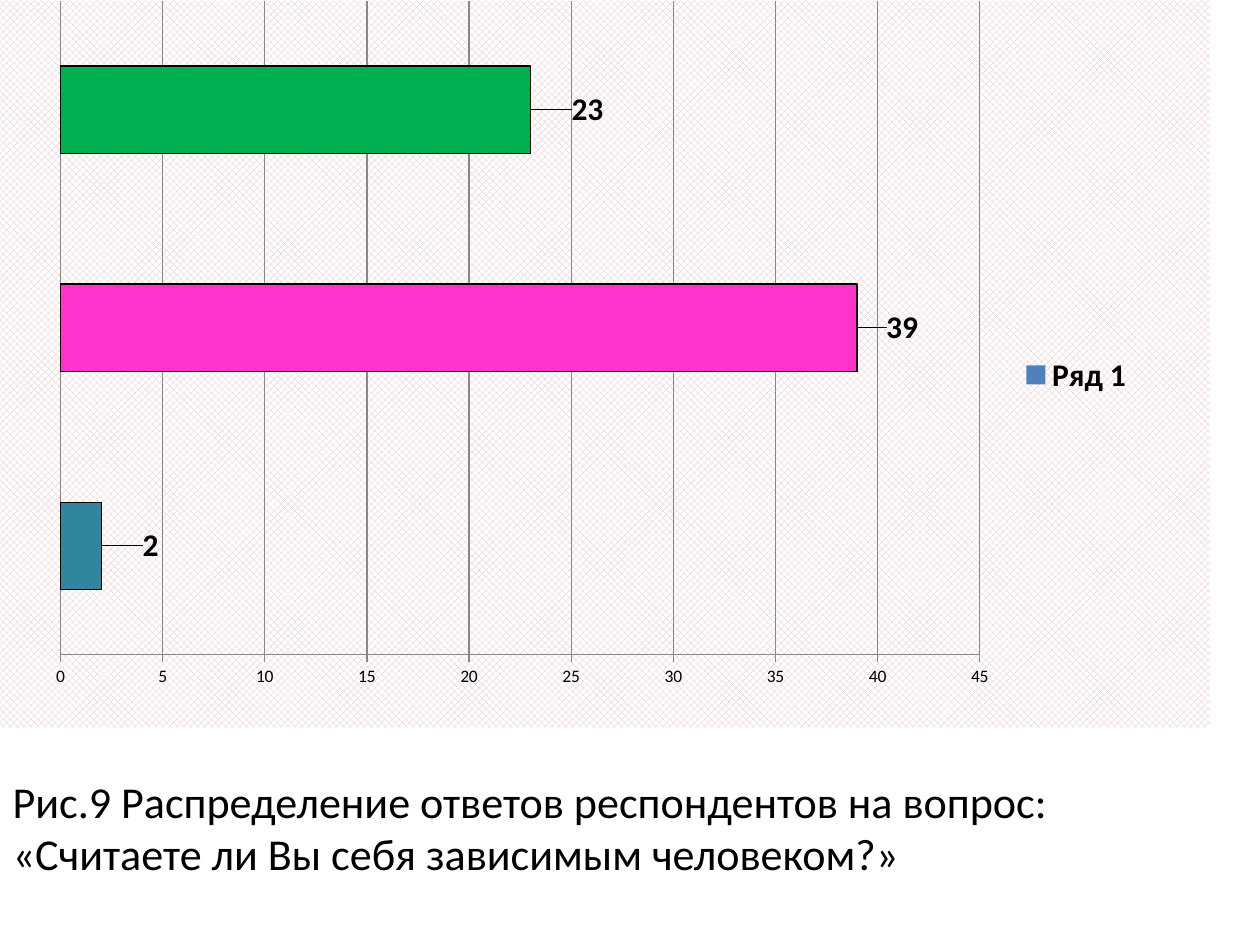
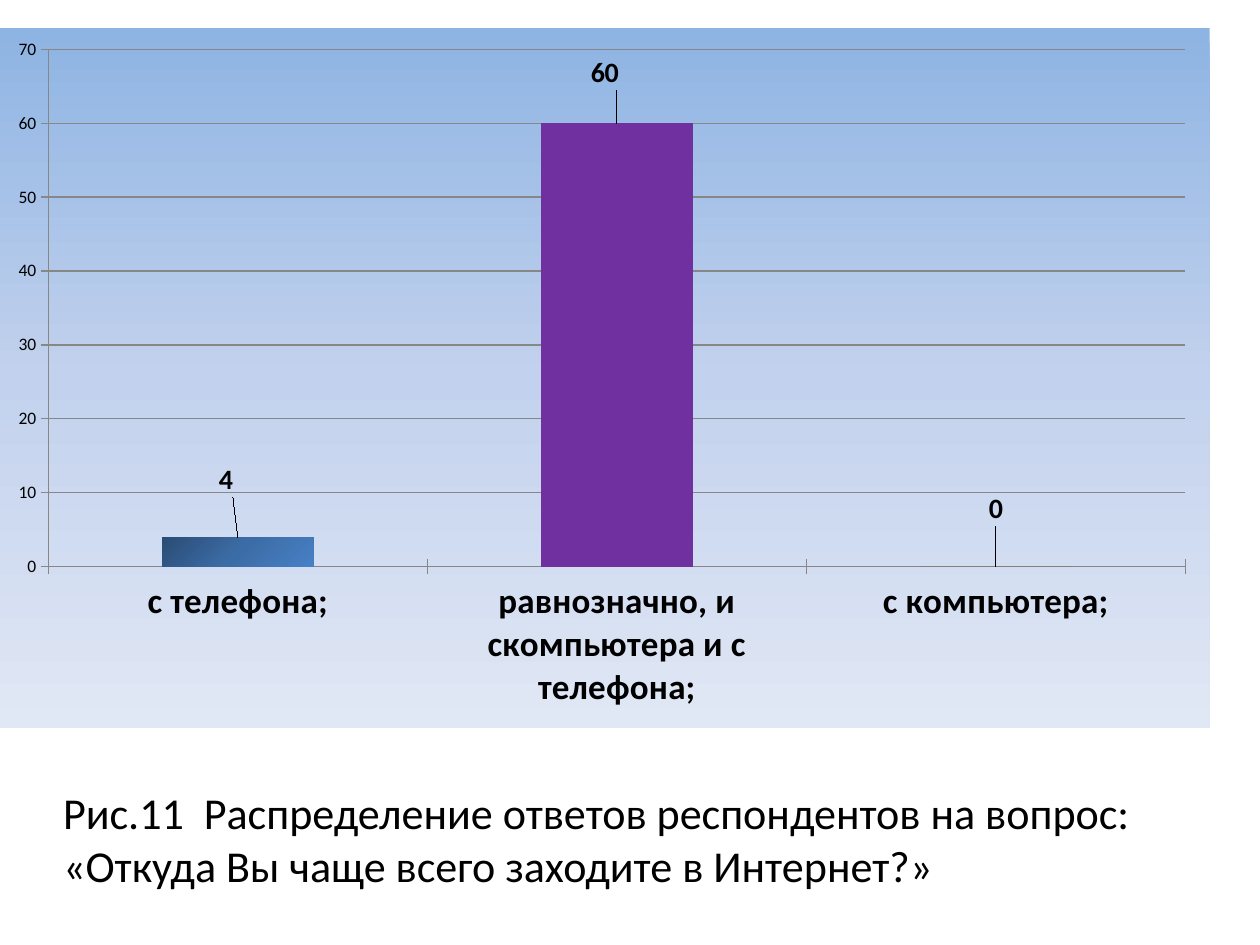
import pptx
import pptx.util
import pptx.oxml
import pptx.chart.data
import pptx.dml.color
import pptx.enum.chart
import pptx.enum.text

WIDE, HIGH = 10, 7.5
FACE, INK, GRID, BLUE = "Calibri", "000000", "878787", "4F81BD"
SPACE = ('xmlns:c="http://schemas.openxmlformats.org/drawingml/2006/chart" '
         'xmlns:a="http://schemas.openxmlformats.org/drawingml/2006/main"')
KINDS = pptx.enum.chart.XL_CHART_TYPE


def color(code):
    return pptx.dml.color.RGBColor.from_string(code)


def node(text):
    head, rest = text.split(">", 1)
    return pptx.oxml.parse_xml(f"{head} {SPACE}>{rest}")


def place(box):
    x, y, w, h = box
    return [pptx.util.Inches(n) for n in (x * WIDE, y * HIGH, w * WIDE, h * HIGH)]


def style(font, size, bold=False):
    font.name, font.size, font.bold = FACE, pptx.util.Pt(size), bold
    font.color.rgb = color(INK)


def write(frame, text, size=25.2, bold=False, foot=0.05):
    frame.word_wrap = True
    frame.auto_size = pptx.enum.text.MSO_AUTO_SIZE.NONE
    frame.vertical_anchor = pptx.enum.text.MSO_ANCHOR.MIDDLE
    frame.margin_bottom = pptx.util.Inches(foot)
    para = frame.paragraphs[0]
    para.alignment = pptx.enum.text.PP_ALIGN.LEFT
    run = para.add_run()
    run.text = text
    style(run.font, size, bold)


def shade(stops, angle):
    marks = "".join(f'<a:gs pos="{at * 1000}"><a:srgbClr val="{code}"/></a:gs>'
                    for at, code in stops)
    return (f'<a:gradFill><a:gsLst>{marks}</a:gsLst>'
            f'<a:lin ang="{angle * 60000}" scaled="0"/></a:gradFill>')


def check(fore, back):
    return (f'<a:pattFill prst="lgCheck"><a:fgClr><a:srgbClr val="{fore}"/></a:fgClr>'
            f'<a:bgClr><a:srgbClr val="{back}"/></a:bgClr></a:pattFill>')


def layout(x, y, w=None, h=None):
    parts = ""
    if w is not None:
        parts += '<c:layoutTarget val="inner"/>'
    if w is not None or h is not None:
        parts += '<c:xMode val="edge"/><c:yMode val="edge"/>'
    for name, share in zip("xywh", (x, y, w, h)):
        if share is not None:
            parts += f'<c:{name} val="{share}"/>'
    return node(f"<c:layout><c:manualLayout>{parts}</c:manualLayout></c:layout>")


def caption(slide, box, text, foot=0.05):
    title = slide.shapes.title
    title.left, title.top, title.width, title.height = place(box)
    write(title.text_frame, text, foot=foot)


def rule(line):
    line.color.rgb = color(GRID)
    line.width = pptx.util.Pt(0.75)


def axes(chart, top, step):
    value, group = chart.value_axis, chart.category_axis
    value.minimum_scale, value.maximum_scale, value.major_unit = 0, top, step
    value.has_major_gridlines = True
    rule(value.major_gridlines.format.line)
    for axis in (value, group):
        axis.major_tick_mark = pptx.enum.chart.XL_TICK_MARK.CROSS
        rule(axis.format.line)


def paint(chart, fills, size, shifts, edge):
    row = chart.plots[0].series[0]
    row.format.fill.solid()
    row.format.fill.fore_color.rgb = color(BLUE)
    row.invert_if_negative = False
    style(row.data_labels.font, size, True)
    row.data_labels.show_value = True
    for spot, (fill, shift) in enumerate(zip(fills, shifts)):
        point = row.points[spot]
        point.format.fill.solid()
        point.format.fill.fore_color.rgb = color(BLUE if "<" in fill else fill)
        if edge:
            point.format.line.color.rgb = color(INK)
            point.format.line.width = pptx.util.Pt(0.75)
        if "<" in fill:
            solid = chart.element.xpath(f".//c:dPt[{spot + 1}]/c:spPr/a:solidFill")[0]
            solid.getparent().replace(solid, node(fill))
        label = point.data_label
        style(label.font, size, True)
        label.position = pptx.enum.chart.XL_LABEL_POSITION.OUTSIDE_END
        chart.element.xpath(f".//c:dLbl[{spot + 1}]")[0].insert(1, layout(*shift))


def graph(slide, box, kind, name, names, values, back, inner):
    data = pptx.chart.data.CategoryChartData()
    data.categories = names
    data.add_series(name, values)
    chart = slide.shapes.add_chart(kind, *place(box), data).chart
    style(chart.font, 10)
    chart.has_title = chart.has_legend = False
    chart.plots[0].gap_width = 150
    chart.plots[0].vary_by_categories = False
    body = chart.element.xpath("c:chart")[0]
    body.addnext(node(f"<c:spPr>{back}<a:ln><a:noFill/></a:ln></c:spPr>"))
    area = chart.element.xpath(".//c:plotArea")[0]
    for old in area.xpath("c:layout"):
        area.remove(old)
    area.insert(0, layout(*inner))
    return chart


def legend(chart, x, y):
    chart.has_legend = True
    chart.legend.position = pptx.enum.chart.XL_LEGEND_POSITION.RIGHT
    chart.legend.include_in_layout = False
    style(chart.legend.font, 18, True)
    part = chart.element.xpath(".//c:legend")[0]
    for old in part.xpath("c:layout"):
        part.remove(old)
    part.xpath("c:legendPos")[0].addnext(node(
        '<c:layout><c:manualLayout><c:xMode val="edge"/><c:yMode val="edge"/>'
        f'<c:x val="{x}"/><c:y val="{y}"/></c:manualLayout></c:layout>'))


def habit(slide):
    caption(slide, (0, 0.79, 0.9, 0.17),
            "Рис.9 Распределение ответов респондентов на вопрос: "
            "«Считаете ли Вы себя зависимым человеком?»")
    chart = graph(slide, (0, 0, 0.96, 0.77), KINDS.BAR_CLUSTERED, "Ряд 1",
                  ("1", "2", "3"), (2, 39, 23), check("E6B9B8", "FFFFFF"),
                  (0.05, 0, 0.76, 0.9))
    axes(chart, 45, 5)
    chart.category_axis.visible = False
    paint(chart, ("31859C", "FF33CC", "00B050"), 18,
          ((0.03, 0), (0.02, 0), (0.03, 0)), True)
    legend(chart, 0.84, 0.48)


def device(slide):
    caption(slide, (0.04, 0.83, 0.9, 0.17),
            "Рис.11  Распределение ответов респондентов на вопрос: "
            "«Откуда Вы чаще всего заходите в Интернет?»", foot=0.47)
    sky = shade(((0, "8EB4E3"), (50, "C2D1ED"), (100, "E1E8F5")), 90)
    steel = shade(((0, "2A4C75"), (50, "3C6CA6"), (100, "4780C5")), 45)
    chart = graph(slide, (0, 0.03, 0.96, 0.74), KINDS.COLUMN_CLUSTERED, "Series 1",
                  ("с телефона;", "равнозначно, и скомпьютера и с телефона;",
                   "с компьютера;"), (4, 60, 0), sky, (0.04, 0.03, 0.94, 0.74))
    axes(chart, 70, 10)
    style(chart.category_axis.tick_labels.font, 20, True)
    paint(chart, (steel, "7030A0", "984807"), 16,
          ((-0.01, -0.05), (-0.01, -0.04), (0, -0.05)), False)


def main():
    deck = pptx.Presentation()
    deck.slide_width = pptx.util.Inches(WIDE)
    deck.slide_height = pptx.util.Inches(HIGH)
    for build in (habit, device):
        build(deck.slides.add_slide(deck.slide_layouts[5]))
    deck.save("out.pptx")


if __name__ == "__main__":
    main()
